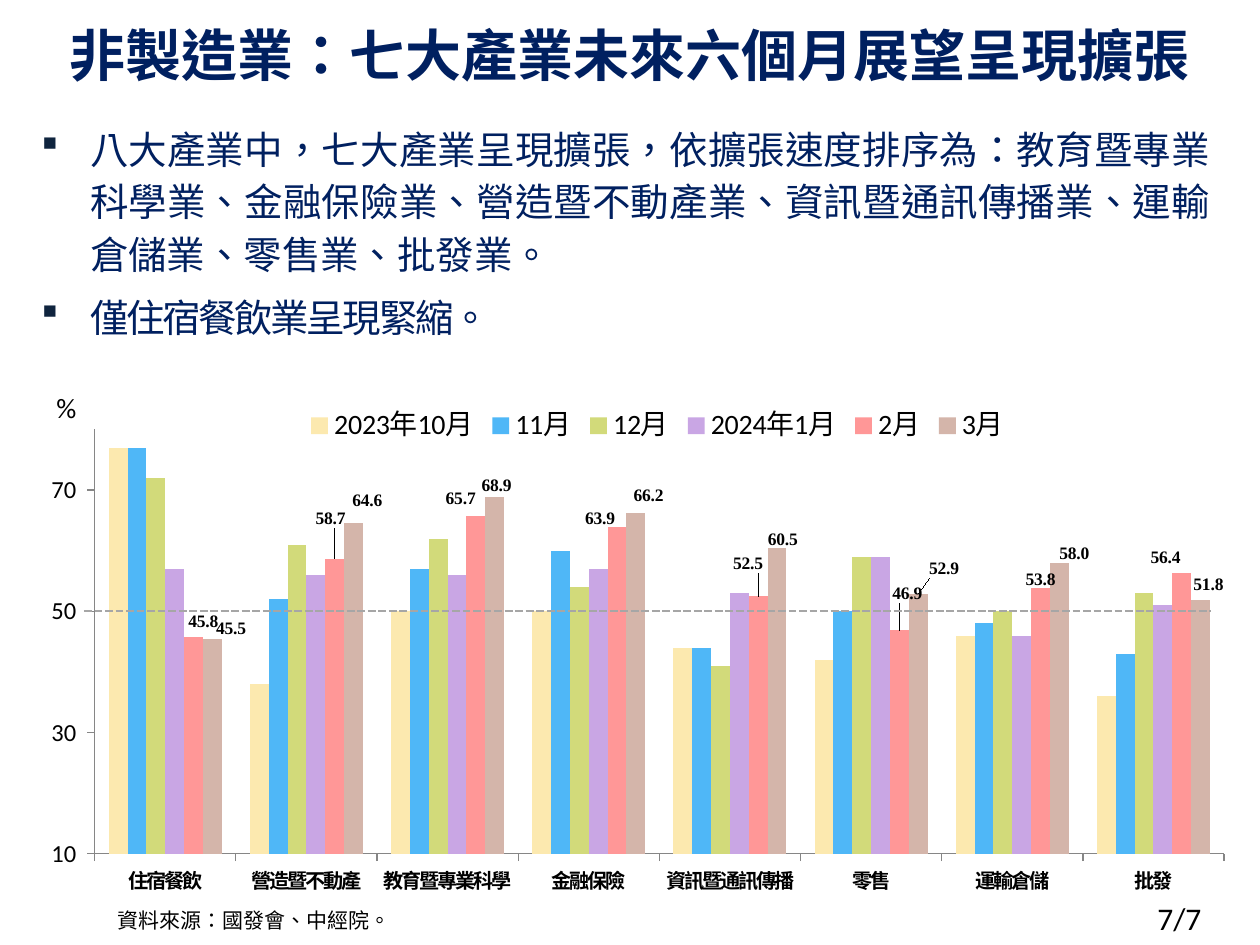
from lxml import etree
from pptx import Presentation
from pptx import util as u
from pptx.chart.data import CategoryChartData
from pptx.dml.color import RGBColor
from pptx.enum import chart as charts, dml, lang, shapes, text
from pptx.oxml import ns

SCALE = 914400 / 126
CJK = "Noto Sans CJK SC"
NAVY = "002060"
CHART_BOX = (27, 373, 1208, 544)
C15 = "{http://schemas.microsoft.com/office/drawing/2012/chart}"
LEADER_LINES_URI = "{CE6537A1-D6FC-4f65-9D91-7224C49458BB}"
CATEGORIES = ["住宿餐飲", "營造暨不動產", "教育暨專業科學", "金融保險",
              "資訊暨通訊傳播", "零售", "運輸倉儲", "批發"]
SERIES = [
    ("2023年10月", "FCE9AF", [77, 38, 50, 50, 44, 42, 46, 36]),
    ("11月", "4FB7F7", [77, 52, 57, 60, 44, 50, 48, 43]),
    ("12月", "D2DA7A", [72, 61, 62, 54, 41, 59, 50, 53]),
    ("2024年1月", "C9A6E4", [57, 56, 56, 57, 53, 59, 46, 51]),
    ("2月", "FF9797", [45.8, 58.7, 65.7, 63.9, 52.5, 46.9, 53.8, 56.4]),
    ("3月", "D4B5AA", [45.5, 64.6, 68.9, 66.2, 60.5, 52.9, 58.0, 51.8]),
]
# Label shifts in px from the place just above each column
LABEL_SHIFTS = {
    "2月": [(12, 0), (-2, -25), (-13, -3), (-15, 6),
           (-8, -18), (10, -22), (2, 6), (-14, 0)],
    "3月": [(21, 5), (16, -7), (4, 4), (15, -3),
           (8, 7), (28, -10), (17, 6), (10, -1)],
}


def px(value):
    return u.Emu(round(value * SCALE))


def color(hex_string):
    return RGBColor.from_string(hex_string)


def add_xml(parent, tag, index=None, **attributes):
    name = tag if tag.startswith("{") else ns.qn(tag)
    element = etree.Element(name, {k: str(v) for k, v in attributes.items()})
    parent.insert(len(parent) if index is None else index, element)
    return element


def format_font(font, size, face, hex_color="000000", bold=False, spacing=0):
    font.size = u.Pt(size)
    font.bold = bold
    font.color.rgb = color(hex_color)
    font.name = face
    properties = font._element
    add_xml(properties, "a:ea", typeface=face)
    if spacing:
        properties.set("spc", str(round(spacing * 100)))


def write_paragraph(paragraph, content, size, face, hex_color="000000", bold=False,
                    spacing=0, align=None, line=None, before=0):
    paragraph.alignment = align
    paragraph.space_before = u.Pt(before)
    if line:
        paragraph.line_spacing = u.Pt(line)
    run = paragraph.add_run()
    run.text = content
    run.font.language_id = lang.MSO_LANGUAGE_ID.TRADITIONAL_CHINESE
    run.font._element.set("altLang", "en-US")
    format_font(run.font, size, face, hex_color, bold, spacing)


def place_rounded(shape, left, top, width, height):
    """Move a placeholder and give it a rounded outline."""
    shape.left, shape.top = px(left), px(top)
    shape.width, shape.height = px(width), px(height)
    geometry = add_xml(shape._element.spPr, "a:prstGeom", 1, prst="roundRect")
    add_xml(geometry, "a:avLst")


def add_text(slide, box, content, size, face, **options):
    shape = slide.shapes.add_textbox(*map(px, box))
    shape.text_frame.word_wrap = True
    write_paragraph(shape.text_frame.paragraphs[0], content, size, face, **options)


def fill_title(shape, content):
    place_rounded(shape, 0, 0, 1260, 106)
    frame = shape.text_frame
    frame.auto_size = text.MSO_AUTO_SIZE.NONE
    frame.vertical_anchor = text.MSO_ANCHOR.MIDDLE
    write_paragraph(frame.paragraphs[0], content, 32, CJK, hex_color=NAVY,
                    bold=True, align=text.PP_ALIGN.CENTER, line=40)


def fill_bullets(shape, items):
    """Write (content, letter spacing) items with square bullets."""
    place_rounded(shape, 2, 106, 1235, 277)
    frame = shape.text_frame
    frame.auto_size = text.MSO_AUTO_SIZE.NONE
    frame.vertical_anchor = text.MSO_ANCHOR.TOP
    frame.margin_top = frame.margin_bottom = 0
    for number, (content, spacing) in enumerate(items):
        paragraph = frame.add_paragraph() if number else frame.paragraphs[0]
        write_paragraph(paragraph, content, 22, CJK, hex_color=NAVY, spacing=spacing,
                        align=text.PP_ALIGN.JUSTIFY, line=30, before=6)
        properties = paragraph._p.get_or_add_pPr()
        properties.set("marL", str(px(62)))
        properties.set("indent", str(-px(49)))
        bullet_color = add_xml(properties, "a:buClr")
        add_xml(bullet_color, "a:srgbClr", val="0F243E")
        add_xml(properties, "a:buFont", typeface="Wingdings", charset=2)
        add_xml(properties, "a:buChar", char="§")


def set_layout(parent, index, **values):
    """Insert a manual chart layout; values are layout tags in schema order."""
    layout = add_xml(parent, "c:layout", index)
    manual = add_xml(layout, "c:manualLayout")
    for tag, value in values.items():
        add_xml(manual, f"c:{tag}", val=value)


def label_points(series, shifts):
    for number, (right, down) in enumerate(shifts):
        label = series.points[number].data_label
        label.position = charts.XL_LABEL_POSITION.OUTSIDE_END
        format_font(label.font, 10, "Times New Roman", bold=True)
        element = label._dLbl
        set_layout(element, 1, x=round(right / CHART_BOX[2], 4),
                   y=round(down / CHART_BOX[3], 4))
        add_xml(element, "c:numFmt", 2, formatCode="0.0_ ", sourceLinked=0)
    extensions = add_xml(series.data_labels._element, "c:extLst")
    extension = add_xml(extensions, "c:ext", uri=LEADER_LINES_URI)
    add_xml(extension, C15 + "showLeaderLines", val=0)


def format_axis(axis, size, face, **options):
    axis.has_major_gridlines = False
    axis.major_tick_mark = charts.XL_TICK_MARK.OUTSIDE
    axis.format.line.color.rgb = color("868686")
    format_font(axis.tick_labels.font, size, face, **options)


def add_column_chart(slide):
    data = CategoryChartData()
    data.categories = CATEGORIES
    for name, _, values in SERIES:
        data.add_series(name, values)
    chart = slide.shapes.add_chart(charts.XL_CHART_TYPE.COLUMN_CLUSTERED,
                                   *map(px, CHART_BOX), data).chart
    chart.has_title = False
    format_font(chart.font, 18, "Cabin")
    plot = chart.plots[0]
    plot.gap_width, plot.overlap, plot.vary_by_categories = 150, 0, False
    for series, (name, fill, _) in zip(plot.series, SERIES):
        series.format.fill.solid()
        series.format.fill.fore_color.rgb = color(fill)
        if name in LABEL_SHIFTS:
            label_points(series, LABEL_SHIFTS[name])

    format_axis(chart.category_axis, 11.5, CJK, bold=True, spacing=-1)
    axis = chart.value_axis
    format_axis(axis, 14, "Calibri")
    axis.minimum_scale, axis.maximum_scale, axis.major_unit = 10, 80, 20
    axis.tick_labels.number_format = r"0_ ;[Red]\-0\ "
    axis.tick_labels.number_format_is_linked = False

    chart.has_legend = True
    chart.legend.position = charts.XL_LEGEND_POSITION.TOP
    chart.legend.include_in_layout = False
    format_font(chart.legend.font, 16, "Calibri")
    set_layout(chart.legend._element, 1, xMode="edge", yMode="edge",
               x=0.227, y=0.062, w=0.59, h=0.07)
    area = chart._chartSpace.chart.plotArea
    for old in area.findall(ns.qn("c:layout")):
        area.remove(old)
    set_layout(area, 0, layoutTarget="inner", xMode="edge", yMode="edge",
               x=0.056, y=0.104, w=0.935, h=0.78)


def add_threshold(slide, left, right, top):
    line = slide.shapes.add_connector(shapes.MSO_CONNECTOR.STRAIGHT,
                                      px(left), px(top), px(right), px(top))
    line.line.color.rgb = color("A6A6A6")
    line.line.width = u.Pt(1.5)
    line.line.dash_style = dml.MSO_LINE.SQUARE_DOT
    add_xml(line._element.spPr, "a:effectLst")


def main():
    presentation = Presentation()
    presentation.slide_width, presentation.slide_height = px(1260), px(945)
    slide = presentation.slides.add_slide(presentation.slide_layouts[1])
    title, body = slide.placeholders
    add_column_chart(slide)
    add_threshold(slide, 84, 1211, 611)
    fill_title(title, "非製造業：七大產業未來六個月展望呈現擴張")
    fill_bullets(body, [
        ("八大產業中，七大產業呈現擴張，依擴張速度排序為：教育暨專業科學業、"
         "金融保險業、營造暨不動產業、資訊暨通訊傳播業、運輸倉儲業、零售業、批發業。", 0),
        ("僅住宿餐飲業呈現緊縮。", -1.3),
    ])
    add_text(slide, (44, 384, 79, 47), "%", 16, "Calibri")
    add_text(slide, (105, 906, 1100, 34), "資料來源：國發會、中經院。", 12,
             "Noto Sans CJK JP", line=12, before=2)
    add_text(slide, (1145, 893, 115, 50), "7/7", 18, "Calibri")
    presentation.save("out.pptx")


if __name__ == "__main__":
    main()
